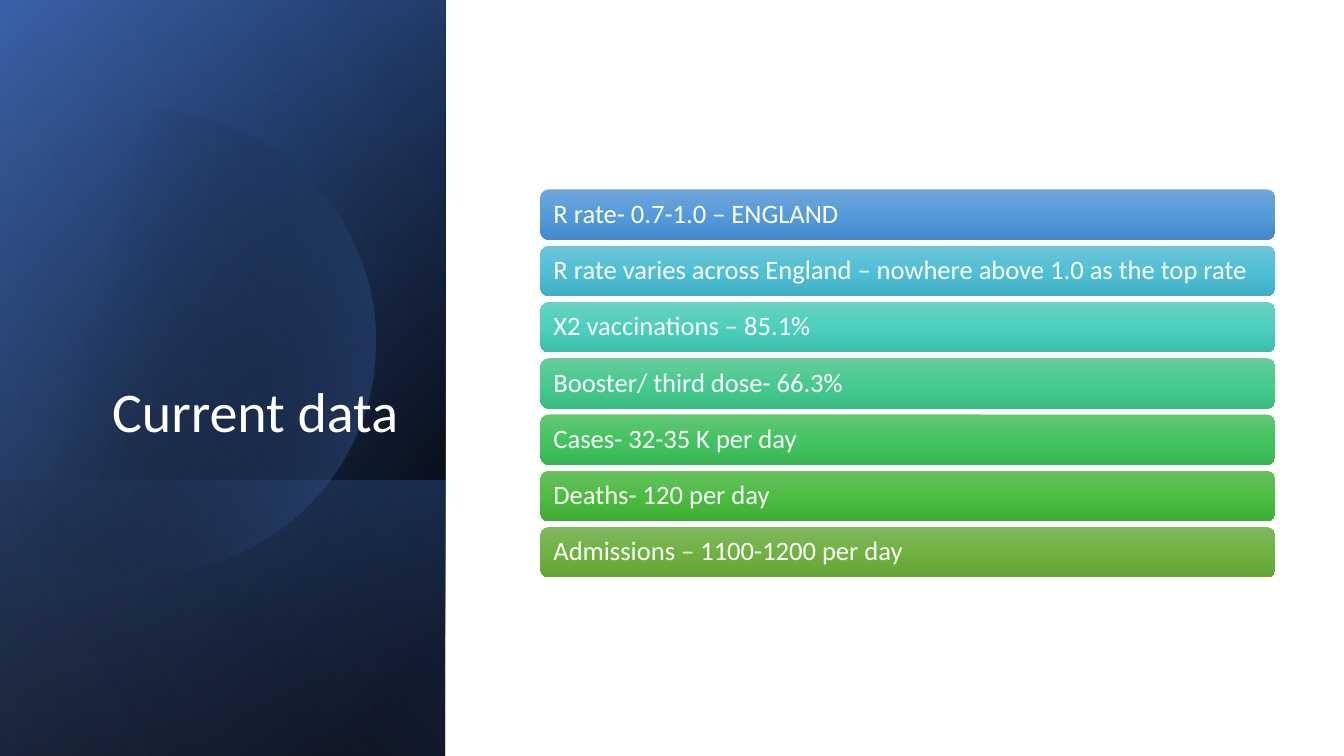
from dataclasses import dataclass
from math import acos, cos, pi, sin

from lxml import etree
from pptx import Presentation
from pptx.dml.color import RGBColor
from pptx.enum import shapes, text
from pptx.oxml import ns
from pptx.util import Pt


@dataclass(frozen=True)
class Theme:
    font: str = "Calibri"
    white: str = "FFFFFF"
    title: int = 40
    body: int = 19
    base: tuple = ((8, "000000", 100), (100, "2F5597", 100))
    glow: tuple = ((0, "000000", 0), (99, "4472C4", 46))
    foot: tuple = ((2, "4472C4", 29), (100, "000000", 30))
    disc: tuple = ((29, "000000", 0), (100, "4472C4", 43))
    sheen: tuple = ((0, "000000", 0), (99, "8FAADC", 11))
    bars: tuple = (
        ("71A6DB", "559BDB", "448ACA"),
        ("6EC4D6", "50C0D6", "40AFC5"),
        ("6AD1C0", "4CD0BC", "3CC0AC"),
        ("67CC9A", "47CB8E", "39BB7F"),
        ("64C677", "44C460", "36B552"),
        ("69C062", "4CBD41", "3FAD34"),
        ("81B861", "6FB242", "62A336"),
    )


THEME = Theme()
FACTS = (
    "R rate- 0.7-1.0 – ENGLAND",
    "R rate varies across England – nowhere above 1.0 as the top rate",
    "X2 vaccinations – 85.1%",
    "Booster/ third dose- 66.3%",
    "Cases- 32-35 K per day",
    "Deaths- 120 per day",
    "Admissions – 1100-1200 per day",
)


def paint(shape, stops, angle):
    shape.shadow.inherit = False
    shape.line.fill.background()
    shape.fill.gradient()
    grad = shape._element.spPr.find(ns.qn("a:gradFill"))
    grad.find(ns.qn("a:lin")).set("ang", str(angle * 60000))
    ramp = grad.find(ns.qn("a:gsLst"))
    for old in list(ramp):
        ramp.remove(old)
    for place, color, alpha in stops:
        stop = etree.SubElement(ramp, ns.qn("a:gs"), pos=str(place * 1000))
        tint = etree.SubElement(stop, ns.qn("a:srgbClr"), val=color)
        if alpha < 100:
            etree.SubElement(tint, ns.qn("a:alpha"), val=str(alpha * 1000))


def write(shape, words, *, size, align, anchor, inset):
    frame = shape.text_frame
    frame.word_wrap = True
    frame.vertical_anchor = anchor
    frame.margin_left = frame.margin_right = Pt(inset)
    frame.margin_top = frame.margin_bottom = Pt(3.6)
    para = frame.paragraphs[0]
    para.alignment = align
    para.line_spacing = 0.9
    run = para.add_run()
    run.text = words
    run.font.name = THEME.font
    run.font.size = Pt(size)
    run.font.color.rgb = RGBColor.from_string(THEME.white)


def layer(slide, box, stops, angle):
    x, y, w, h = box
    shape = slide.shapes.add_shape(
        shapes.MSO_SHAPE.RECTANGLE,
        Pt(x + (w - h) / 2), Pt(y + (h - w) / 2), Pt(h), Pt(w))
    shape.rotation = 90
    shape._element.spPr.xfrm.set("flipH", "1")
    paint(shape, stops, angle)


def disc(slide, box):
    x, y, r = box[0] + 102.5, box[1] + 244, 165.5
    edge = acos((box[0] - x) / r)
    count = 120
    turns = [edge * (2 * i / count - 1) for i in range(count + 1)]
    points = [(Pt(x + r * cos(t)), Pt(y + r * sin(t))) for t in turns]
    path = slide.shapes.build_freeform(*points[0])
    path.add_line_segments(points[1:], close=True)
    paint(path.convert_to_shape(), THEME.disc, 14)


def panel(slide, box):
    x, y, w, h = box
    layer(slide, box, THEME.base, 50)
    layer(slide, box, THEME.glow, 30)
    layer(slide, (x, y + h - 197, w, 197), THEME.foot, 130)
    disc(slide, box)
    layer(slide, box, THEME.sheen, 120)
    title = slide.shapes.add_textbox(Pt(x + 46), Pt(y + 132.5), Pt(245.5), Pt(188.5))
    write(title, "Current data", size=THEME.title, align=text.PP_ALIGN.RIGHT,
          anchor=text.MSO_ANCHOR.BOTTOM, inset=7.2)


def facts(slide, box):
    x, y, w, h = box
    bar = 36
    step = (h - bar) / (len(FACTS) - 1)
    for i, (words, tones) in enumerate(zip(FACTS, THEME.bars)):
        shape = slide.shapes.add_shape(
            shapes.MSO_SHAPE.ROUNDED_RECTANGLE,
            Pt(x), Pt(y + i * step), Pt(w), Pt(bar))
        paint(shape, [(50 * n, tone, 100) for n, tone in enumerate(tones)], 90)
        write(shape, words, size=THEME.body, align=text.PP_ALIGN.LEFT,
              anchor=text.MSO_ANCHOR.MIDDLE, inset=7.6)


def main():
    deck = Presentation()
    deck.slide_width, deck.slide_height = Pt(960), Pt(540)
    slide = deck.slides.add_slide(deck.slide_layouts[6])
    panel(slide, (0, 0, 318, 540))
    facts(slide, (386, 135.3, 525, 277.2))
    deck.save("out.pptx")


if __name__ == "__main__":
    main()
